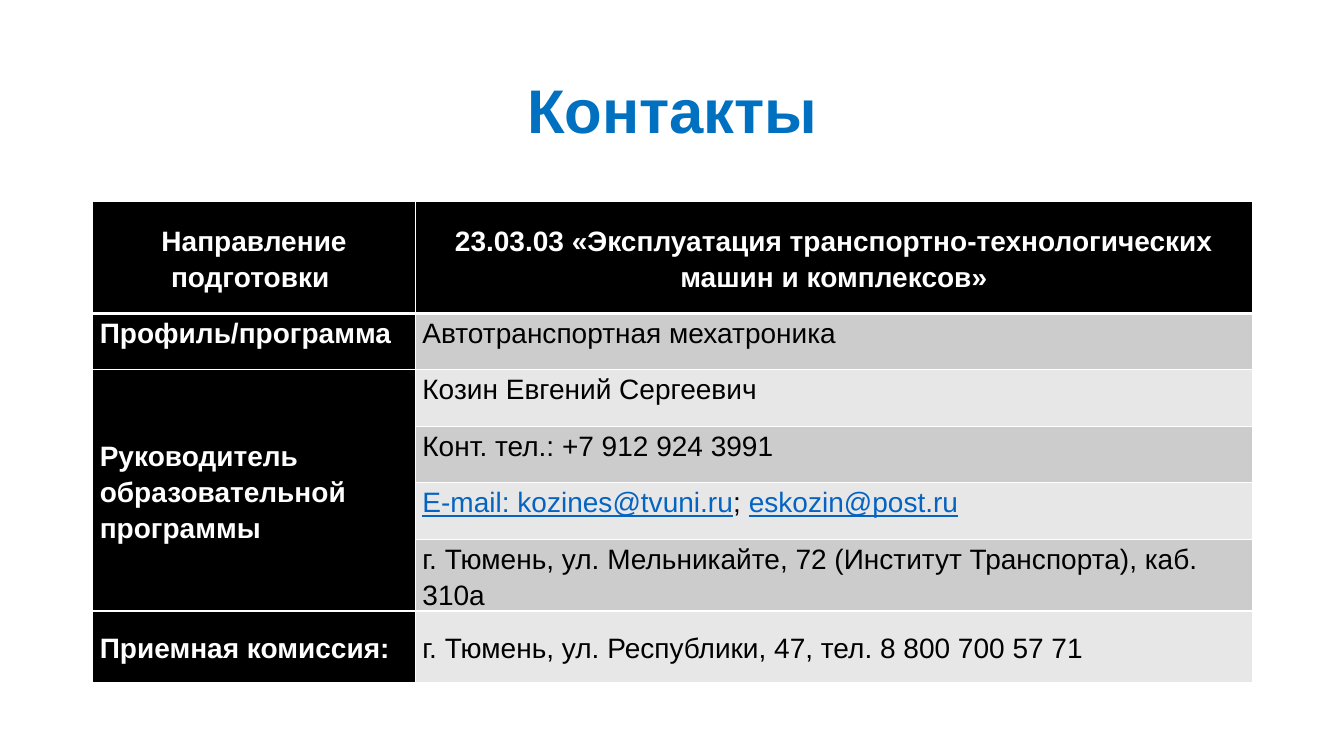
from pptx import Presentation
from pptx import util as u
from pptx.dml.color import RGBColor
from pptx.enum import text
from pptx.oxml import parse_xml
from pptx.oxml.ns import nsdecls
from dataclasses import dataclass

MID, TOP = text.MSO_ANCHOR.MIDDLE, text.MSO_ANCHOR.TOP
LEFT, CENTER = text.PP_ALIGN.LEFT, text.PP_ALIGN.CENTER


@dataclass(frozen=True)
class Theme:
    font: str = "Arial"
    big: int = 44
    body: int = 20
    blue: str = "0070C0"
    link: str = "0563C1"
    dark: str = "000000"
    light: str = "FFFFFF"
    bands: tuple = ("CCCCCC", "E7E7E7")


def write(frame, parts, size, font, color, bold=False, align=LEFT,
          space=1.0, anchor=TOP, link=None):
    frame.word_wrap = True
    frame.vertical_anchor = anchor
    par = frame.paragraphs[0]
    par.alignment, par.line_spacing = align, space
    for words, linked in parts:
        run = par.add_run()
        run.text = words
        face = run.font
        face.name, face.size, face.bold = font, u.Pt(size), bold
        face.underline = linked
        face.color.rgb = RGBColor.from_string(link if linked else color)


class Deck:
    """Builds slides in one style and keeps the current slide."""

    def __init__(self, theme):
        self.theme = theme
        self.file = Presentation()
        self.file.slide_width = u.Inches(13.33)
        self.file.slide_height = u.Inches(7.5)
        self.slide = self.file.slides.add_slide(self.file.slide_layouts[5])

    def title(self, words, box):
        head = self.slide.shapes.title
        head.left, head.top, head.width, head.height = map(u.Inches, box)
        write(head.text_frame, [(words, False)], self.theme.big,
              self.theme.font, self.theme.blue, bold=True, align=CENTER,
              space=0.9, anchor=MID)

    def edge(self, cell, sides):
        props = cell._tc.get_or_add_tcPr()
        for side, width in sides.items():
            props.append(parse_xml(
                f'<a:ln{side} {nsdecls("a")} w="{u.Pt(width)}"><a:solidFill>'
                f'<a:srgbClr val="{self.theme.light}"/></a:solidFill></a:ln{side}>'))

    def cell(self, cell, parts, fill, **form):
        cell.margin_left = cell.margin_right = u.Inches(0.07)
        cell.margin_top = cell.margin_bottom = 0
        cell.fill.solid()
        cell.fill.fore_color.rgb = RGBColor.from_string(fill)
        write(cell.text_frame, parts, self.theme.body, self.theme.font,
              space=1.15, link=self.theme.link, **form)
        cell.vertical_anchor = form["anchor"]

    def table(self, rows, box, cols, highs, merge):
        look = self.theme
        grid = self.slide.shapes.add_table(
            len(rows), len(cols), *map(u.Inches, box)).table
        for col, width in zip(grid.columns, cols):
            col.width = u.Inches(width)
        for row, high in zip(grid.rows, highs):
            row.height = u.Inches(high)
        first, last = merge
        grid.cell(first, 0).merge(grid.cell(last, 0))
        ends = (0, len(rows) - 1)
        for r, row in enumerate(rows):
            for c, parts in enumerate(row):
                cell = grid.cell(r, c)
                self.edge(cell, {"L": 1, "R": 1, "T": 3 if r == 1 else 1,
                                 "B": 3 if r == 0 else 1})
                dark = r == 0 or c == 0
                mid = r in ends or (c == 0 and first <= r <= last)
                self.cell(cell, parts,
                          look.dark if dark else look.bands[(r - 1) % 2],
                          color=look.light if dark else look.dark, bold=dark,
                          align=CENTER if r == 0 else LEFT,
                          anchor=MID if mid else TOP)


def plain(words):
    return [(words, False)]


def main():
    deck = Deck(Theme())
    deck.title("Контакты", (0.92, 0.4, 11.5, 1.45))
    mail = [("E-mail: kozines@tvuni.ru", True), ("; ", False),
            ("eskozin@post.ru", True)]
    rows = [
        (plain("Направление подготовки "),
         plain("23.03.03 «Эксплуатация транспортно-технологических машин и комплексов»")),
        (plain("Профиль/программа"), plain("Автотранспортная мехатроника")),
        (plain("Руководитель образовательной программы"),
         plain("Козин Евгений Сергеевич")),
        ([], plain("Конт. тел.: +7 912 924 3991")),
        ([], mail),
        ([], plain("г. Тюмень, ул. Мельникайте, 72 (Институт Транспорта), каб. 310а")),
        (plain("Приемная комиссия:"),
         plain("г. Тюмень, ул. Республики, 47, тел. 8 800 700 57 71")),
    ]
    highs = [1.11] + [0.56] * 4 + [0.71] * 2
    deck.table(rows, (0.92, 2, 11.5, sum(highs)), (3.2, 8.3), highs, (2, 5))
    deck.file.save("out.pptx")


if __name__ == "__main__":
    main()
